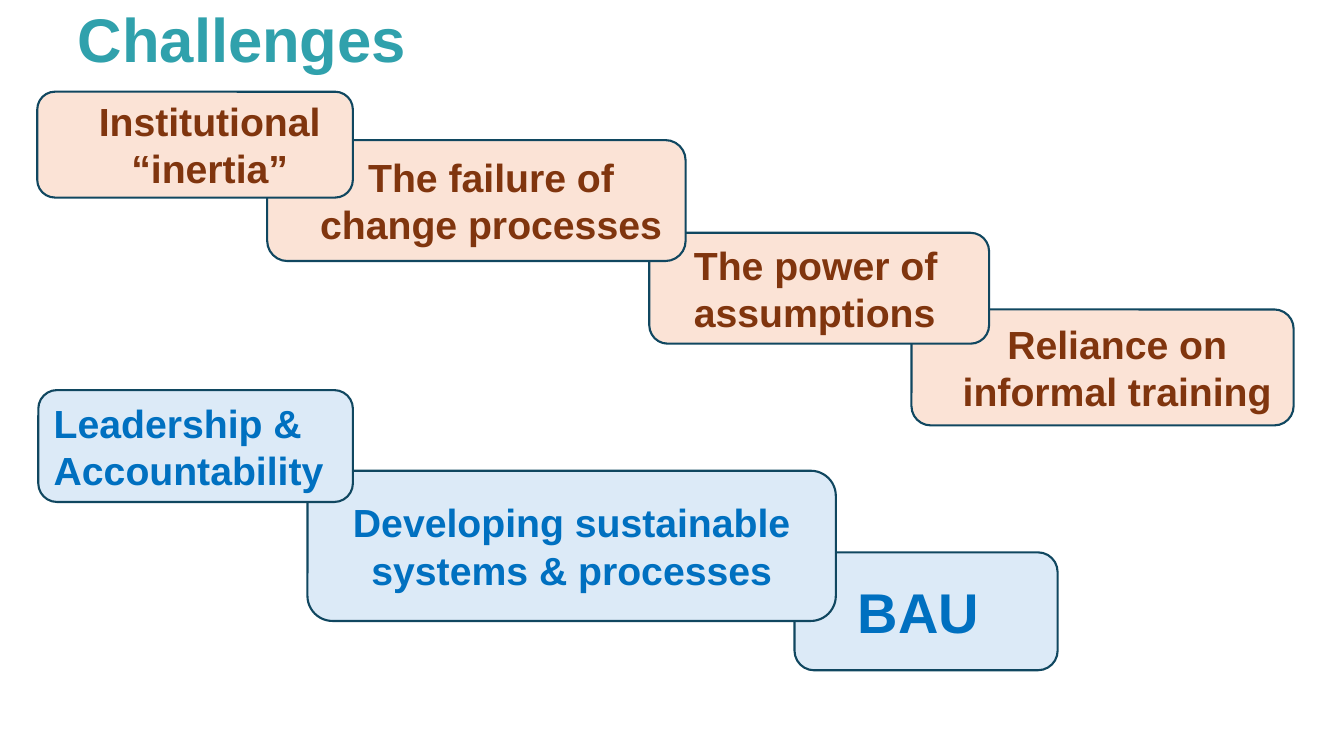
from dataclasses import dataclass

from pptx import Presentation
from pptx.dml.color import RGBColor
from pptx.enum.shapes import MSO_SHAPE
from pptx.enum.text import MSO_ANCHOR, PP_ALIGN
from pptx.shapes.group import GroupShape
from pptx.slide import Slide
from pptx.text.text import _Paragraph
from pptx.util import Emu, Pt

EMU_PER_PX = 9144  # 100 px to the inch
COLORS = {
    "title": "30A1AC",
    "outline": "104760",
    "problem_fill": "FBE3D6",
    "problem_text": "80350E",
    "response_fill": "DCEAF7",
    "response_text": "0070C0",
}


@dataclass(frozen=True)
class Card:
    text: str
    left: int
    top: int
    width: int
    height: int
    align: PP_ALIGN = PP_ALIGN.CENTER
    size: int = 28


@dataclass(frozen=True)
class Cascade:
    """Overlapping cards, listed from back to front."""
    theme: str
    indent: int
    cards: tuple[Card, ...]


CASCADES = (
    Cascade("problem", 29, (
        Card("Reliance on informal training", 904, 307, 379, 115),
        Card("The power of assumptions", 644, 231, 337, 110, PP_ALIGN.LEFT),
        Card("The failure of change processes", 265, 139, 415, 120),
        Card("Institutional “inertia”", 37, 91, 313, 105),
    )),
    Cascade("response", 0, (
        Card("BAU ", 788, 548, 261, 117, size=40),
        Card("Developing sustainable systems & processes", 305, 467, 524, 149),
        Card("Leadership & Accountability", 38, 387, 312, 111, PP_ALIGN.LEFT),
    )),
)


def px(length: int) -> Emu:
    return Emu(length * EMU_PER_PX)


def rgb(name: str) -> RGBColor:
    return RGBColor.from_string(COLORS[name])


def write(p: _Paragraph, text: str, size: int, color: str) -> None:
    r = p.add_run()
    r.text = text
    for name, value in {"name": "Arial", "size": Pt(size), "bold": True}.items():
        setattr(r.font, name, value)
    r.font.color.rgb = rgb(color)


def add_title(slide: Slide, text: str) -> None:
    title = slide.shapes.title
    box = {"left": 67, "top": 0, "width": 1150, "height": 85}
    for name, value in box.items():
        setattr(title, name, px(value))
    tf = title.text_frame
    tf.vertical_anchor = MSO_ANCHOR.MIDDLE
    p = tf.paragraphs[0]
    p.alignment = PP_ALIGN.LEFT
    p.line_spacing = 0.9
    write(p, text, 44, "title")


def add_card(group: GroupShape, card: Card, theme: str, indent: int) -> None:
    sp = group.shapes.add_shape(
        MSO_SHAPE.ROUNDED_RECTANGLE,
        px(card.left), px(card.top), px(card.width), px(card.height))
    sp.shadow.inherit = False
    sp.fill.solid()
    sp.fill.fore_color.rgb = rgb(f"{theme}_fill")
    sp.line.color.rgb = rgb("outline")
    sp.line.width = Pt(1.5)
    tf = sp.text_frame
    tf.word_wrap = True
    tf.vertical_anchor = MSO_ANCHOR.MIDDLE
    p = tf.paragraphs[0]
    p.alignment = card.align
    if indent:
        pPr = p._p.get_or_add_pPr()
        pPr.set("marL", str(px(indent)))
        pPr.set("indent", "0")
    write(p, card.text, card.size, f"{theme}_text")


def main() -> None:
    prs = Presentation()
    prs.slide_width, prs.slide_height = px(1333), px(750)
    slide = prs.slides.add_slide(prs.slide_layouts.get_by_name("Title Only"))
    add_title(slide, "Challenges")
    for cascade in CASCADES:
        group = slide.shapes.add_group_shape()
        for card in cascade.cards:
            add_card(group, card, cascade.theme, cascade.indent)
    prs.save("out.pptx")


if __name__ == "__main__":
    main()
